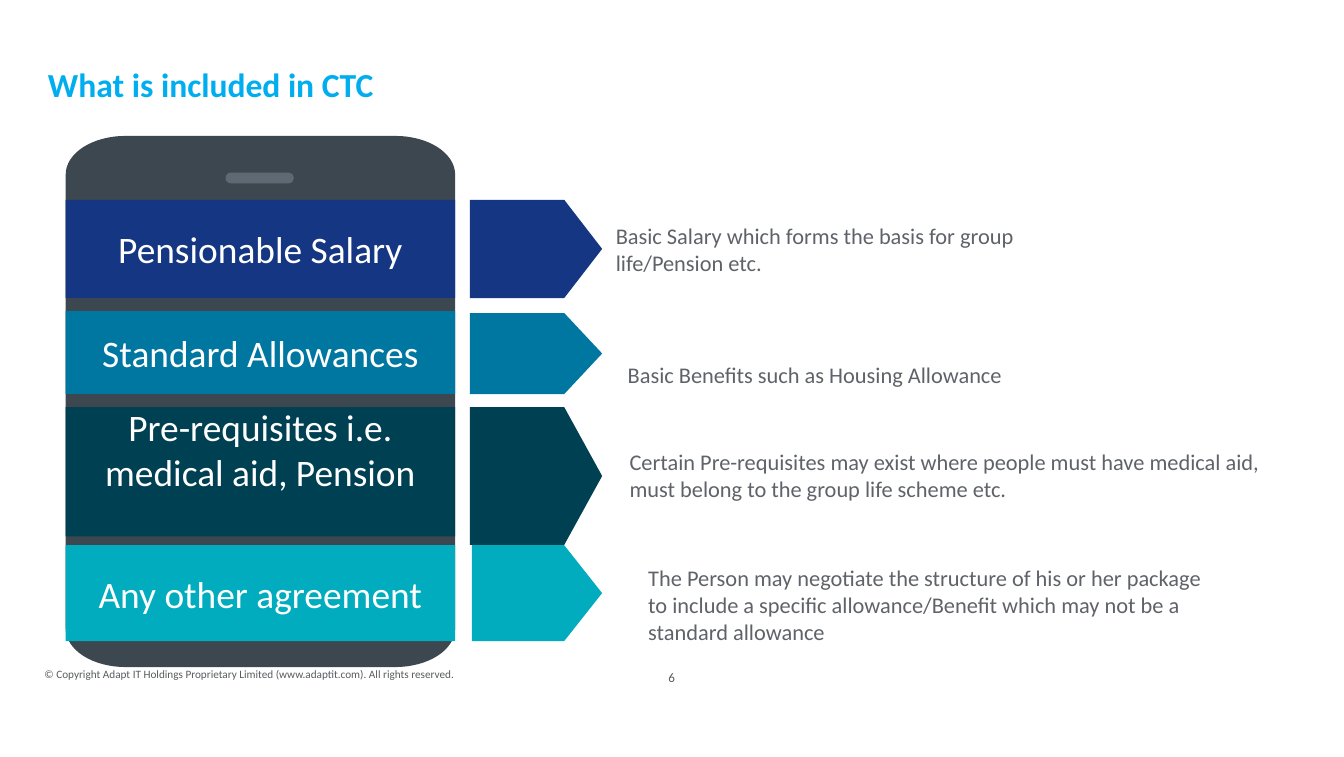
from math import cos, pi, sin

from pptx import Presentation
from pptx.dml.color import RGBColor
from pptx.enum.shapes import MSO_SHAPE as Preset
from pptx.enum.text import MSO_ANCHOR as Anchor, PP_ALIGN as Align
from pptx.util import Pt

FONT = "Calibri"
WHITE = RGBColor(0xFF, 0xFF, 0xFF)
TITLE_BLUE = RGBColor(0x00, 0xAE, 0xEF)
FOOTER_GREY = RGBColor(0x58, 0x5C, 0x5E)
BODY_GREY = RGBColor(0x5F, 0x63, 0x69)
CASE_GREY = RGBColor(0x3D, 0x47, 0x50)
SPEAKER_GREY = RGBColor(0x5F, 0x69, 0x74)
NAVY = RGBColor(0x15, 0x36, 0x83)
BLUE = RGBColor(0x00, 0x77, 0xA0)
PETROL = RGBColor(0x00, 0x40, 0x53)
TURQUOISE = RGBColor(0x00, 0xAC, 0xBD)

INSET = 7.2
PHONE_BOX = (35.2, 72.8, 208.6, 284.4)
ARROW_RIGHT = 322.6
ARROW_TIP = 20.3

# label, colour, band (top, height), arrow (left, top, height),
# description, its box, and the (top, bottom) insets of the label
ITEMS = [
    ("Pensionable Salary", NAVY, (107, 52.6), (251.8, 107, 52.6),
     "Basic Salary which forms the basis for group life/Pension etc.",
     (322.8, 111.9, 271.4, 43.2), (INSET, INSET)),
    ("Standard Allowances", BLUE, (166.6, 44.4), (251.8, 167.6, 43.4),
     "Basic Benefits such as Housing Allowance",
     (329.2, 182.4, 322.6, 36), (INSET, INSET)),
    ("Pre-requisites i.e. medical aid, Pension", PETROL,
     (218, 69.2), (251.8, 218, 73.8),
     "Certain Pre-requisites may exist where people must have medical aid, "
     "must belong to the group life scheme etc.",
     (330.2, 240.1, 367.2, 28.8), (0, 24.4)),
    ("Any other agreement", TURQUOISE, (291.9, 51.4), (252.8, 291.9, 51.4),
     "The Person may negotiate the structure of his or her package to include "
     "a specific allowance/Benefit which may not be a standard allowance",
     (340.2, 295.7, 319.7, 56.2), (INSET, INSET)),
]


def paint(shape, color):
    shape.shadow.inherit = False
    shape.fill.solid()
    shape.fill.fore_color.rgb = color
    shape.line.fill.background()
    return shape


def add_preset(slide, preset, box, color):
    return paint(slide.shapes.add_shape(preset, *map(Pt, box)), color)


def write(shape, text, size, color, align=Align.LEFT, side=0, ends=(0, 0)):
    """Fill a shape with one paragraph; side and ends are the insets."""
    frame = shape.text_frame
    frame.word_wrap = True
    frame.vertical_anchor = Anchor.MIDDLE
    frame.margin_left = frame.margin_right = Pt(side)
    frame.margin_top, frame.margin_bottom = map(Pt, ends)
    paragraph = frame.paragraphs[0]
    paragraph.text = text
    paragraph.alignment = align
    font = paragraph.font
    font.name, font.size, font.color.rgb = FONT, Pt(size), color
    return paragraph


def add_text(slide, box, *args, **kwargs):
    return write(slide.shapes.add_textbox(*map(Pt, box)), *args, **kwargs)


def add_title(slide, box):
    paragraph = add_text(slide, box, "What is included in CTC", 18, TITLE_BLUE)
    paragraph.font.bold = True
    paragraph.line_spacing = Pt(22.6)


def add_phone(slide, box):
    """Draw the case, whose corners are wider than high, and the speaker."""
    left, top, width, height = box
    radius_x, radius_y, steps = 32, 20.6, 16
    centers = [(width - radius_x, height - radius_y), (radius_x, height - radius_y),
               (radius_x, radius_y), (width - radius_x, radius_y)]
    points = []
    for corner, (x, y) in enumerate(centers):
        for step in range(steps + 1):
            angle = (corner + step / steps) * pi / 2
            points.append((Pt(left + x + radius_x * cos(angle)),
                           Pt(top + y + radius_y * sin(angle))))
    builder = slide.shapes.build_freeform(*points[0])
    builder.add_line_segments(points[1:], close=True)
    paint(builder.convert_to_shape(), CASE_GREY)

    speaker = add_preset(slide, Preset.ROUNDED_RECTANGLE,
                         (left + 85.6, top + 19.6, 36.6, 5.8), SPEAKER_GREY)
    speaker.adjustments[0] = 0.5


def add_item(slide, phone_box, item):
    label, color, band, arrow, description, text_box, ends = item
    phone_left, _, phone_width, _ = phone_box
    arrow_left, arrow_top, arrow_height = arrow
    arrow_width = ARROW_RIGHT - arrow_left
    pointer = add_preset(slide, Preset.PENTAGON,
                         (arrow_left, arrow_top, arrow_width, arrow_height), color)
    pointer.adjustments[0] = ARROW_TIP / min(arrow_width, arrow_height)

    band_top, band_height = band
    bar = add_preset(slide, Preset.RECTANGLE,
                     (phone_left, band_top, phone_width, band_height), color)
    write(bar, label, 20, WHITE, Align.CENTER, INSET, ends)
    add_text(slide, text_box, description, 12, BODY_GREY,
             side=INSET, ends=(INSET, INSET))


def add_footer(slide, copyright_box, number_box):
    add_text(slide, copyright_box,
             "© Copyright Adapt IT Holdings Proprietary Limited "
             "(www.adaptit.com). All rights reserved.", 6, FOOTER_GREY)
    add_text(slide, number_box, "6", 7, FOOTER_GREY, Align.CENTER)


def main():
    presentation = Presentation()
    presentation.slide_width, presentation.slide_height = Pt(720), Pt(405.36)
    slide = presentation.slides.add_slide(presentation.slide_layouts[6])
    add_footer(slide, (23.8, 344.5, 248.4, 33.1), (310.1, 344.2, 99.4, 37.4))
    add_title(slide, (25.7, 25.2, 671.8, 38.2))
    add_phone(slide, PHONE_BOX)
    for item in ITEMS:
        add_item(slide, PHONE_BOX, item)
    presentation.save("out.pptx")


if __name__ == "__main__":
    main()
